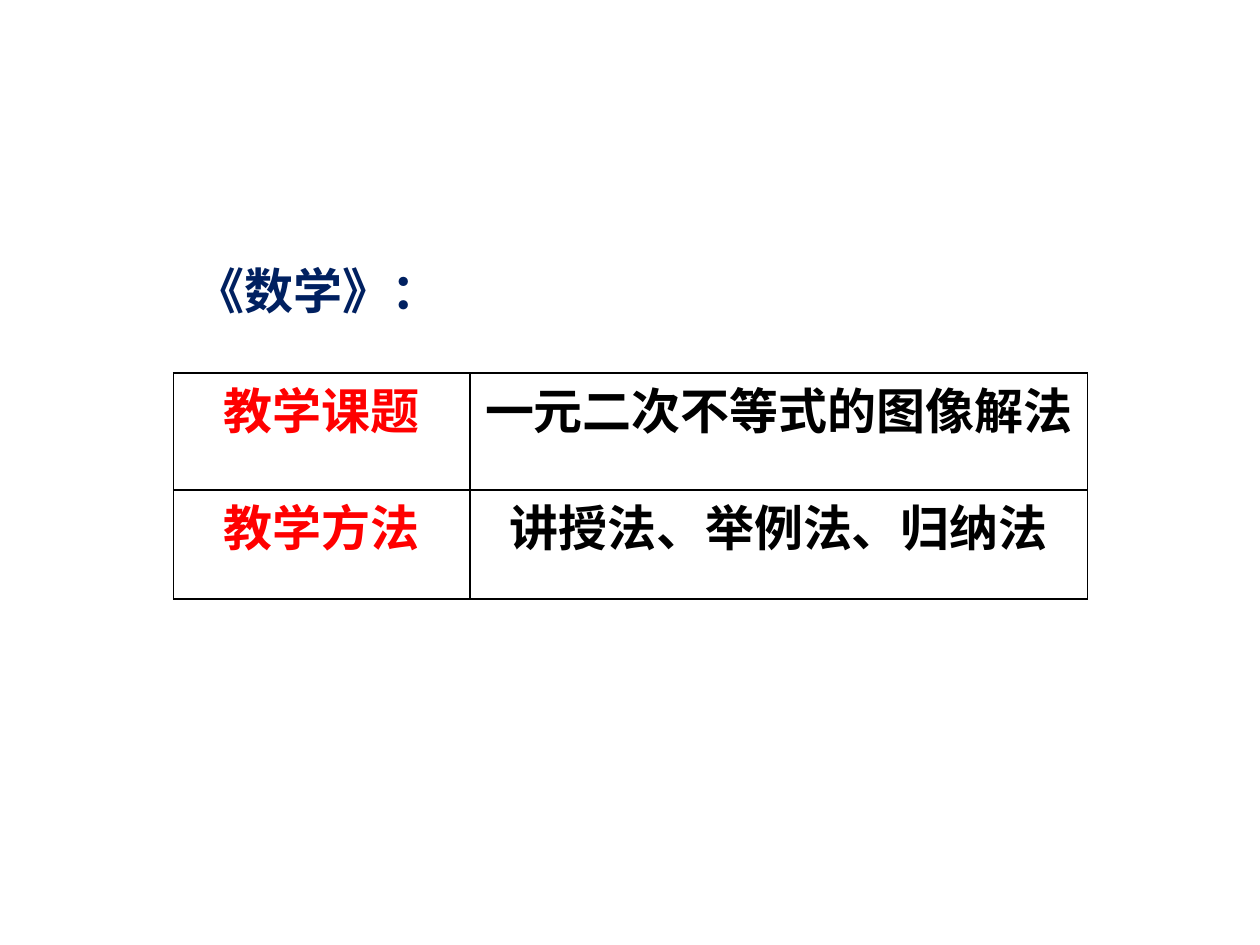
from dataclasses import dataclass

from lxml.etree import SubElement
from pptx import Presentation
from pptx.dml.color import RGBColor as RGB
from pptx.enum.lang import MSO_LANGUAGE_ID as Lang
from pptx.enum.text import PP_ALIGN as Align
from pptx.oxml.ns import qn
from pptx.util import Cm, Pt


@dataclass(frozen=True)
class Theme:
    navy: RGB = RGB(0x00, 0x20, 0x60)
    red: RGB = RGB(0xFF, 0x00, 0x00)
    black: RGB = RGB(0x00, 0x00, 0x00)
    size: Pt = Pt(28)
    line: Pt = Pt(1)
    face: str = "Calibri"
    alt: str = "Arial"


@dataclass(frozen=True)
class Label:
    text: str
    color: RGB
    face: str


@dataclass(frozen=True)
class Row:
    height: Cm
    cells: tuple[Label, ...]


THEME = Theme()
TITLE = Label("《数学》：", THEME.navy, THEME.face)
WIDTHS = (Cm(5.97), Cm(12.45))
ROWS = (
    Row(Cm(2.36), (Label("教学课题", THEME.red, THEME.face),
                   Label("一元二次不等式的图像解法", THEME.black, THEME.face))),
    Row(Cm(2.2), (Label("教学方法", THEME.red, THEME.alt),
                  Label("讲授法、举例法、归纳法", THEME.black, THEME.face))),
)


def write(frame, label: Label, align: Align) -> None:
    para = frame.paragraphs[0]
    para.text = label.text
    para.alignment = align
    font = para.font
    font.name, font.size, font.bold = label.face, THEME.size, True
    font.color.rgb = label.color
    font.language_id = Lang.SIMPLIFIED_CHINESE


def border(cell) -> None:
    """Rule all four sides; the lines must come before the cell's fill."""
    props = cell._tc.get_or_add_tcPr()
    for side in ("lnL", "lnR", "lnT", "lnB"):
        line = SubElement(props, qn(f"a:{side}"), w=str(THEME.line))
        fill = SubElement(line, qn("a:solidFill"))
        SubElement(fill, qn("a:srgbClr"), val=str(THEME.black))


def add_title(slide) -> None:
    box = slide.shapes.add_textbox(Cm(3.7), Cm(5.13), Cm(5), Cm(1.45))
    box.text_frame.word_wrap = False
    write(box.text_frame, TITLE, Align.LEFT)


def add_grid(slide) -> None:
    shape = slide.shapes.add_table(
        len(ROWS), len(WIDTHS), Cm(3.5), Cm(7.52),
        sum(WIDTHS), sum(row.height for row in ROWS))
    table = shape.table
    table.first_row = table.horz_banding = False
    for col, width in zip(table.columns, WIDTHS):
        col.width = width
    for r, row in enumerate(ROWS):
        table.rows[r].height = row.height
        for c, label in enumerate(row.cells):
            cell = table.cell(r, c)
            cell.margin_left = cell.margin_right = Cm(0.18)
            cell.margin_top = cell.margin_bottom = 0
            border(cell)
            cell.fill.background()
            write(cell.text_frame, label, Align.CENTER)


def main() -> None:
    deck = Presentation()
    deck.slide_width, deck.slide_height = Cm(25.4), Cm(19.05)
    slide = deck.slides.add_slide(deck.slide_layouts[6])
    add_title(slide)
    add_grid(slide)
    deck.save("out.pptx")


if __name__ == "__main__":
    main()
